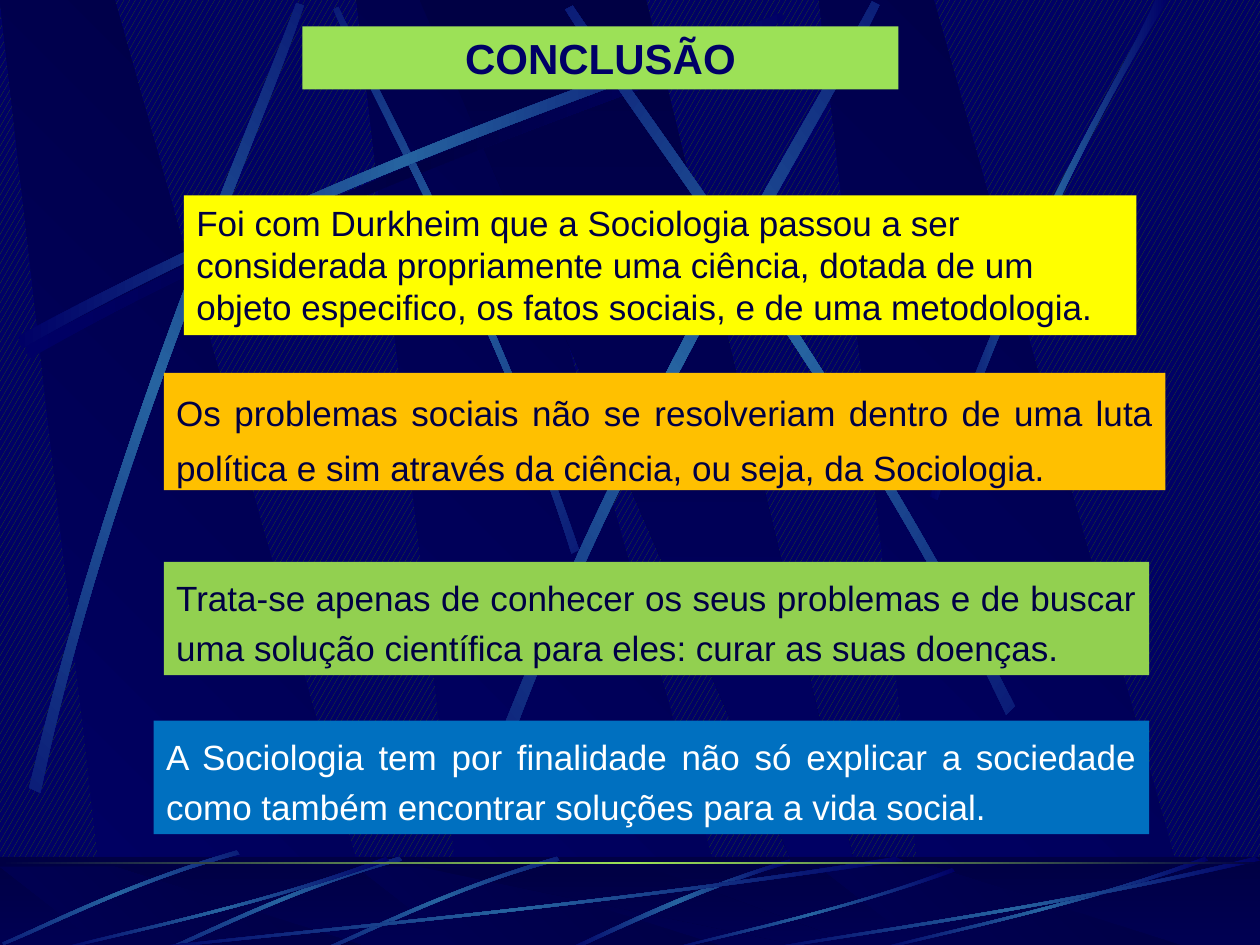
from math import cos, radians, sin

from lxml.etree import SubElement
from pptx import Presentation
from pptx.dml.color import RGBColor
from pptx.enum.dml import MSO_PATTERN
from pptx.enum.shapes import MSO_SHAPE
from pptx.enum.text import MSO_ANCHOR, MSO_AUTO_SIZE, PP_ALIGN
from pptx.oxml.ns import qn
from pptx.util import Inches, Pt

COLORS = {
    "navy": "000066", "night": "000044", "streak": "2663A0", "dots": "2D5513",
    "lime": "9CE157", "blue": "0070C0", "green": "92D050", "orange": "FFC000",
    "yellow": "FFFF00", "white": "FFFFFF",
}

SLAB = [(0.86, 1), (3.02, 1), (0.91, 0), (0, 0)]
WEDGE = [(3.33, 0), (6.58, 1), (6.94, 1), (5.13, 0)]
SLAB_LEFTS = (2.83, 0, 6.5)

ARC = [(0.14, 2.67), (2.78, 1.25), (5.18, 0.51), (6.2, 0.1),
       (6.23, 0.16), (5.22, 0.61), (2.48, 1.43), (0.17, 2.77)]
BEAMS = [
    (45, (3.62, 2.23), [(4.6, 4.36), (3.91, 2.34), (3.02, 0.77), (2.69, 0.05),
                        (2.65, 0.07), (2.95, 0.79), (3.98, 2.58), (4.54, 4.39)]),
    (0, (0, 0), ARC),
    (311.7, (1.33, 3.16), [(0.23, 6.25), (0.93, 3.34), (1.97, 1.05), (2.35, 0.02),
                           (2.41, 0.04), (2.07, 1.09), (0.86, 3.68), (0.32, 6.29)]),
    (321.6, (5.43, 3.11), [(3.85, 6.14), (4.98, 3.2), (6.38, 1.02), (6.92, 0.01),
                           (6.98, 0.04), (6.49, 1.08), (4.86, 3.55), (3.94, 6.21)]),
    (34.7, (6.27, 2.86), [(8.06, 5.6), (6.7, 2.93), (5.16, 0.95), (4.55, 0.04),
                          (4.49, 0.07), (5.07, 1.01), (6.85, 3.25), (7.99, 5.67)]),
    (0, (0, 0), [(7.38, 3.94), (8.14, 1.73), (8.88, 0.66), (9.17, 0),
                 (9.27, 0), (8.36, 1.45), (7.69, 3.22), (7.44, 3.97)]),
]
FOOTER_BEAM = [(6.27, 6.82), (5.37, 7.09), (4.77, 7.42), (4.48, 7.54),
               (4.53, 7.55), (4.9, 7.38), (5.71, 7), (6.28, 6.85)]
TILTED_BEAM = [(4.42, 6.8), (3.55, 7.05), (2.87, 7.4), (2.56, 7.53),
               (2.57, 7.55), (2.88, 7.43), (3.65, 7.03), (4.44, 6.83)]
TILTED_SHIFTS = [(0, 0), (-1.25, 0), (-2.54, -0.05)]
SWEEP = [(1, 0.04), (0.57, 0.57), (0.17, 0.85), (0.01, 1),
         (0, 0.99), (0.17, 0.81), (0.62, 0.51), (0.99, 0)]
SWEEP_FRAMES = [(1, 6.8, 6.17, 0.75), (0.42, 6.8, 2.67, 0.75), (5.27, 6.89, 2.31, 0.66),
                (6.92, 6.8, 2.67, 0.75), (6, 6.8, 4, 0.75)]

STATEMENTS = [
    ("A Sociologia tem por finalidade não só explicar a sociedade como também "
     "encontrar soluções para a vida social.",
     (1.22, 5.72, 7.9, 0.9), "blue", dict(color="white", align=PP_ALIGN.JUSTIFY, spacing=1.2)),
    ("Trata-se apenas de conhecer os seus problemas e de buscar uma solução "
     "científica para eles: curar as suas doenças.",
     (1.3, 4.46, 7.82, 0.9), "green", dict(align=PP_ALIGN.JUSTIFY, spacing=1.2)),
    ("Os problemas sociais não se resolveriam dentro de uma luta política e sim "
     "através da ciência, ou seja, da Sociologia.",
     (1.3, 2.96, 7.95, 0.93), "orange", dict(align=PP_ALIGN.JUSTIFY, spacing=1.3)),
    ("Foi com Durkheim que a Sociologia passou a ser considerada propriamente uma "
     "ciência, dotada de um objeto especifico, os fatos sociais, e de uma metodologia.",
     (1.46, 1.55, 7.56, 1.11), "yellow", {}),
]


def rgb(name):
    return RGBColor.from_string(COLORS[name])


def shift(points, dx, dy):
    return [(x + dx, y + dy) for x, y in points]


def fit(points, left, top, width, height):
    return [(left + x * width, top + y * height) for x, y in points]


def rotate(points, center, degrees):
    cx, cy = center
    c, s = cos(radians(degrees)), sin(radians(degrees))
    return [(cx + (x - cx) * c - (y - cy) * s, cy + (x - cx) * s + (y - cy) * c)
            for x, y in points]


def write(tf, text, size=20, color="night", bold=False, align=PP_ALIGN.LEFT, spacing=1.0,
          fitting=MSO_AUTO_SIZE.SHAPE_TO_FIT_TEXT):
    tf.word_wrap = True
    tf.auto_size = fitting
    tf.vertical_anchor = MSO_ANCHOR.TOP
    p = tf.paragraphs[0]
    p.alignment, p.line_spacing, p.space_before = align, spacing, Pt(0)
    r = p.add_run()
    r.text = text
    r.font.name, r.font.size, r.font.bold = "Arial", Pt(size), bold
    r.font.color.rgb = rgb(color)


class Deck:
    def __init__(self, prs):
        self.slide = prs.slides.add_slide(prs.slide_layouts[5])
        self.shapes = self.slide.shapes

    def background(self, fore, back):
        fill = self.slide.background.fill
        fill.patterned()
        fill.pattern = MSO_PATTERN.LARGE_CONFETTI
        fill.fore_color.rgb, fill.back_color.rgb = rgb(fore), rgb(back)

    def paint(self, sp, colors, angle=0):
        sp.shadow.inherit = False
        sp.line.fill.background()
        if isinstance(colors, str):
            sp.fill.solid()
            sp.fill.fore_color.rgb = rgb(colors)
            return sp
        sp.fill.gradient()
        sp.fill.gradient_angle = (360 - angle) % 360
        stops = sp._element.spPr.find(qn("a:gradFill")).find(qn("a:gsLst"))
        for gs in list(stops):
            stops.remove(gs)
        for i, name in enumerate(colors):
            gs = SubElement(stops, qn("a:gs"), pos=str(100000 * i // (len(colors) - 1)))
            SubElement(gs, qn("a:srgbClr"), val=COLORS[name])
        return sp

    def rect(self, frame, colors, angle=0):
        sp = self.shapes.add_shape(MSO_SHAPE.RECTANGLE, *map(Inches, frame))
        return self.paint(sp, colors, angle)

    def polygon(self, points, colors, angle=0):
        pts = [(Inches(x), Inches(y)) for x, y in points]
        fb = self.shapes.build_freeform(*pts[0])
        fb.add_line_segments(pts[1:], close=True)
        return self.paint(fb.convert_to_shape(), colors, angle)

    def beam(self, points, middle="streak", rotation=0, center=(0, 0)):
        sp = self.polygon(rotate(points, center, -rotation), ("navy", middle, "navy"))
        sp.rotation = rotation
        lines = list(sp._element.iter(qn("a:lnTo")))
        for first, *rest in (lines[:3], lines[4:7]):
            first.tag = qn("a:cubicBezTo")
            for line in rest:
                first.append(line[0])
                line.getparent().remove(line)

    def slabs(self, top, height):
        for left in SLAB_LEFTS:
            self.polygon(fit(SLAB, left, top, 1, height), ("navy", "night"), 315)
        self.polygon(fit(WEDGE, 0, top, 1, height), ("night", "navy"), 90)

    def veil(self, frame, color, percent):
        sp = self.rect(frame, color)
        clr = sp._element.spPr.find(qn("a:solidFill"))[0]
        SubElement(clr, qn("a:alpha"), val=str(percent * 1000))

    def title(self, text, frame, fill, **style):
        sp = self.shapes.title
        sp.left, sp.top, sp.width, sp.height = map(Inches, frame)
        sp.fill.solid()
        sp.fill.fore_color.rgb = rgb(fill)
        write(sp.text_frame, text, fitting=MSO_AUTO_SIZE.NONE, **style)
        self.shapes._spTree.append(sp._element)

    def box(self, text, frame, fill, **style):
        write(self.rect(frame, fill).text_frame, text, **style)


def main():
    prs = Presentation()
    prs.slide_width, prs.slide_height = Inches(10), Inches(7.5)
    deck = Deck(prs)
    deck.background("dots", "navy")
    deck.slabs(0, 7.52)
    deck.beam(shift(ARC, 0.06, 0.08), middle="night")
    for rotation, center, points in BEAMS:
        deck.beam(points, rotation=rotation, center=center)

    footer = (0, 6.8, 10, 0.75)
    deck.rect(footer, ("night", "navy"), 90)
    deck.slabs(6.88, 0.67)
    deck.veil(footer, "night", 50)
    deck.beam(FOOTER_BEAM)
    for dx, dy in TILTED_SHIFTS:
        deck.beam(shift(TILTED_BEAM, dx, dy), rotation=315, center=(3.5 + dx, 7.18 + dy))
    for frame in SWEEP_FRAMES:
        deck.beam(fit(SWEEP, *frame))
    deck.rect((0, 6.84, 10, 0.02), ("night", "lime", "night"))

    deck.title("CONCLUSÃO", (2.4, 0.21, 4.73, 0.5), "lime",
               size=24, color="navy", bold=True, align=PP_ALIGN.CENTER)
    for text, frame, fill, style in STATEMENTS:
        deck.box(text, frame, fill, **style)
    prs.save("out.pptx")


if __name__ == "__main__":
    main()
